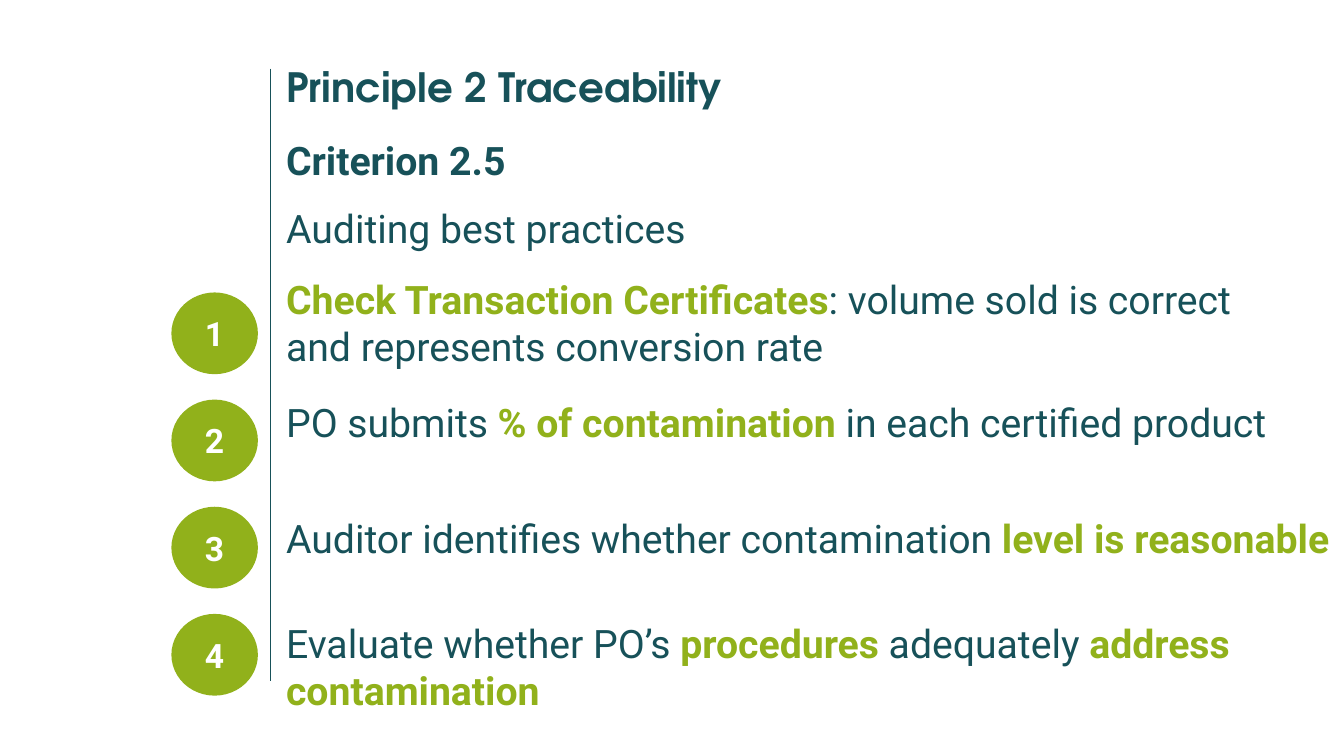
import pptx
import pptx.util
import pptx.dml.color
import pptx.enum.shapes
import pptx.enum.text
import lxml.etree

Cm, Pt = pptx.util.Cm, pptx.util.Pt
RGBColor = pptx.dml.color.RGBColor
TEAL = RGBColor(0x17, 0x51, 0x59)
GREEN = RGBColor(0x91, 0xB1, 0x1B)
WHITE = RGBColor(0xFF, 0xFF, 0xFF)
DRAWING = "{http://schemas.openxmlformats.org/drawingml/2006/main}"
EDGE = 6.96


def write(para, text, size=28, font="Roboto", color=TEAL, bold=False):
    run = para.add_run()
    run.text = text
    run.font.size = Pt(size)
    run.font.name = font
    run.font.bold = bold
    run.font.color.rgb = color


class Board:
    def __init__(self, deck):
        self.slide = deck.slides.add_slide(deck.slide_layouts[6])
        self.shapes = self.slide.shapes

    def rule(self, x, top, end):
        line = self.shapes.add_connector(
            pptx.enum.shapes.MSO_CONNECTOR.STRAIGHT, Cm(x), Cm(top), Cm(x), Cm(end))
        line.line.color.rgb = TEAL
        line.line.width = Pt(0.5)
        props = line._element.spPr
        lxml.etree.SubElement(props, DRAWING + "effectLst")

    def box(self, top, width, height, left=EDGE):
        frame = self.shapes.add_textbox(Cm(left), Cm(top), Cm(width), Cm(height)).text_frame
        frame.word_wrap = True
        frame.margin_right = 0
        return frame

    def badge(self, label, left, top):
        disc = self.shapes.add_shape(
            pptx.enum.shapes.MSO_SHAPE.OVAL, Cm(left), Cm(top), Cm(2.18), Cm(2.06))
        disc.shadow.inherit = False
        disc.fill.solid()
        disc.fill.fore_color.rgb = GREEN
        disc.line.fill.background()
        disc.text_frame.vertical_anchor = pptx.enum.text.MSO_ANCHOR.MIDDLE
        para = disc.text_frame.paragraphs[0]
        para.alignment = pptx.enum.text.PP_ALIGN.CENTER
        write(para, label, size=24, color=WHITE, bold=True)

    def step(self, parts, top, width, height):
        para = self.box(top, width, height).paragraphs[0]
        for text, key in parts:
            write(para, text, color=GREEN if key else TEAL, bold=key)


# Each step: top, width, height, then (text, highlighted) parts
STEPS = [
    (6.81, 24.61, 2.69, [("Check Transaction Certificates", True),
                         (": volume sold is correct and represents conversion rate", False)]),
    (9.91, 26.9, 2.64, [("PO submits ", False), ("% of contamination ", True),
                        ("in each certified product", False)]),
    (12.83, 26.9, 2.64, [("Auditor identifies whether contamination ", False),
                         ("level is reasonable", True)]),
    (15.49, 26.64, 2.64, [("Evaluate whether PO’s ", False), ("procedures", True),
                          (" adequately ", False), ("address contamination", True)]),
]


def main():
    deck = pptx.Presentation()
    deck.slide_width, deck.slide_height = Cm(33.87), Cm(19.05)
    board = Board(deck)

    # Divider and title
    board.rule(6.81, 1.73, 17.17)
    title = board.box(1.45, 25.58, 1.04)
    write(title.paragraphs[0], "Principle 2 Traceability", size=28.8,
          font="TeX Gyre Adventor", bold=True)

    # Criterion heading
    intro = board.box(3.45, 26.9, 3.2)
    first, second = intro.paragraphs[0], intro.add_paragraph()
    first.line_spacing = second.line_spacing = 0.9
    second.space_before = Pt(18)
    write(first, "Criterion 2.5", bold=True)
    write(second, "Auditing best practices")

    # Numbered steps
    for index, (top, width, height, parts) in enumerate(STEPS):
        board.badge(str(index + 1), 4.32, 7.37 + 2.7 * index)
        board.step(parts, top, width, height)

    deck.save("out.pptx")


if __name__ == "__main__":
    main()
